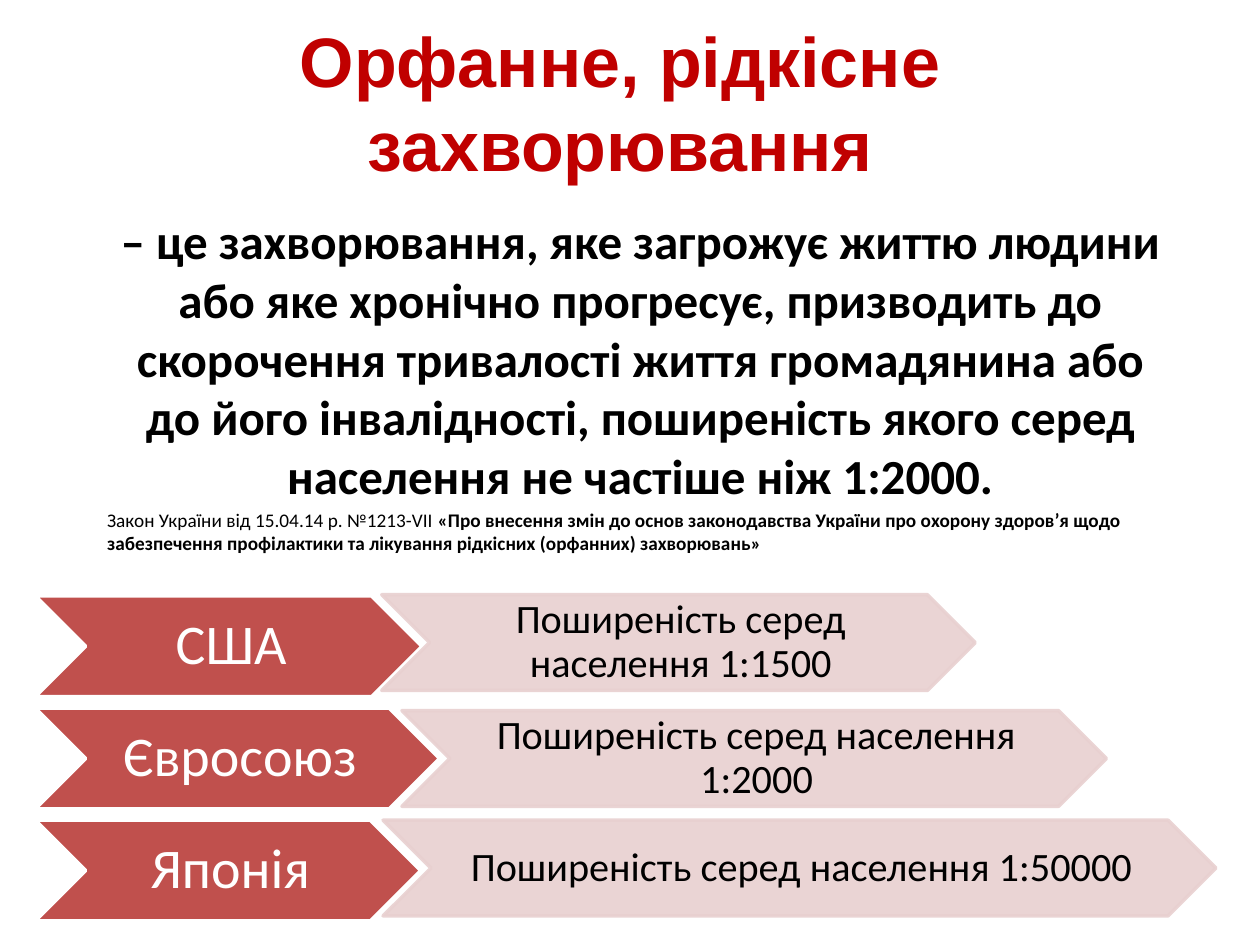
from lxml import etree
from pptx import Presentation
from pptx import util as u
from pptx.dml.color import RGBColor
from pptx.enum import shapes, text
from pptx.oxml.ns import qn

PX = 9144  # EMU per px, 100 px to the inch
THEME = {
    "title": "C00000", "ink": "000000", "white": "FFFFFF",
    "red": "C0504D", "pink": "E8D0D0",
    "head_font": "Arial", "body_font": "Calibri",
    "title_pt": 40, "body_pt": 28, "law_pt": 11, "region_pt": 32, "rate_pt": 23,
}


def style(p, size, color, font="body_font", bold=False, align=text.PP_ALIGN.CENTER):
    p.alignment = align
    for r in p.runs:
        r.font.name, r.font.size, r.font.bold = THEME[font], u.Pt(THEME[size]), bold
        r.font.color.rgb = RGBColor.from_string(THEME[color])


def chevron(box, label, size, color, fill, line, opacity=100):
    sp = s.shapes.add_shape(shapes.MSO_SHAPE.CHEVRON, *(v * PX for v in box))
    sp.adjustments[0] = 0.5
    sp.shadow.inherit = False
    sp.fill.solid()
    sp.fill.fore_color.rgb = RGBColor.from_string(THEME[fill])
    sp.line.color.rgb = RGBColor.from_string(THEME[line])
    sp.line.width = u.Pt(2)
    if opacity < 100:
        for clr in sp._element.spPr.iter(qn("a:srgbClr")):
            etree.SubElement(clr, qn("a:alpha"), val=str(opacity * 1000))
    tf = sp.text_frame
    tf.word_wrap = True
    tf.vertical_anchor = text.MSO_ANCHOR.MIDDLE
    tf.margin_left, tf.margin_right = 4 * PX, 0
    tf.margin_top = tf.margin_bottom = 2 * PX
    tf.text = label
    tf.paragraphs[0].line_spacing = 0.9
    style(tf.paragraphs[0], size, color)


prs = Presentation()
prs.slide_width, prs.slide_height = 1000 * PX, 750 * PX
s = prs.slides.add_slide(prs.slide_layouts[0])

# Title
title = s.shapes.title
title.left, title.top, title.width, title.height = 67 * PX, 0, 850 * PX, 161 * PX
tf = title.text_frame
tf.text = "Орфанне, рідкісне захворювання"
tf.vertical_anchor = text.MSO_ANCHOR.MIDDLE
style(tf.paragraphs[0], "title_pt", "title", "head_font", bold=True)

# Definition and the law it comes from
body = s.placeholders[1]
body.left, body.top, body.width, body.height = 75 * PX, 162 * PX, 866 * PX, 307 * PX
tf = body.text_frame
tf.auto_size = text.MSO_AUTO_SIZE.NONE
tf.text = (
    "– це захворювання, яке загрожує життю людини або яке хронічно прогресує, "
    "призводить до скорочення тривалості життя громадянина або до його інвалідності, "
    "поширеність якого серед населення не частіше ніж 1:2000."
)
style(tf.paragraphs[0], "body_pt", "ink", bold=True)
p = tf.add_paragraph()
p.add_run().text = "Закон України від 15.04.14 р. №1213-VII "
p.add_run().text = (
    "«Про внесення змін до основ законодавства України про охорону здоров’я щодо "
    "забезпечення профілактики та лікування рідкісних (орфанних) захворювань»"
)
style(p, "law_pt", "ink", align=text.PP_ALIGN.LEFT)
p.runs[1].font.bold = True

# Prevalence by region: name, name width, rate, rate left, top and width
rows = [
    ("США", 307, "1:1500", 303, 472, 471),
    ("Євросоюз", 321, "1:2000", 319, 564, 559),
    ("Японія", 306, "1:50000", 304, 651, 661),
]
for i, (region, width, rate, left, top, rate_width) in enumerate(rows):
    chevron((28, 473 + 89 * i, width, 80), region, "region_pt", "white", "red", "white")
    chevron((left, top, rate_width, 76), f"Поширеність серед населення {rate}",
            "rate_pt", "ink", "pink", "pink", opacity=90)

prs.save("out.pptx")
